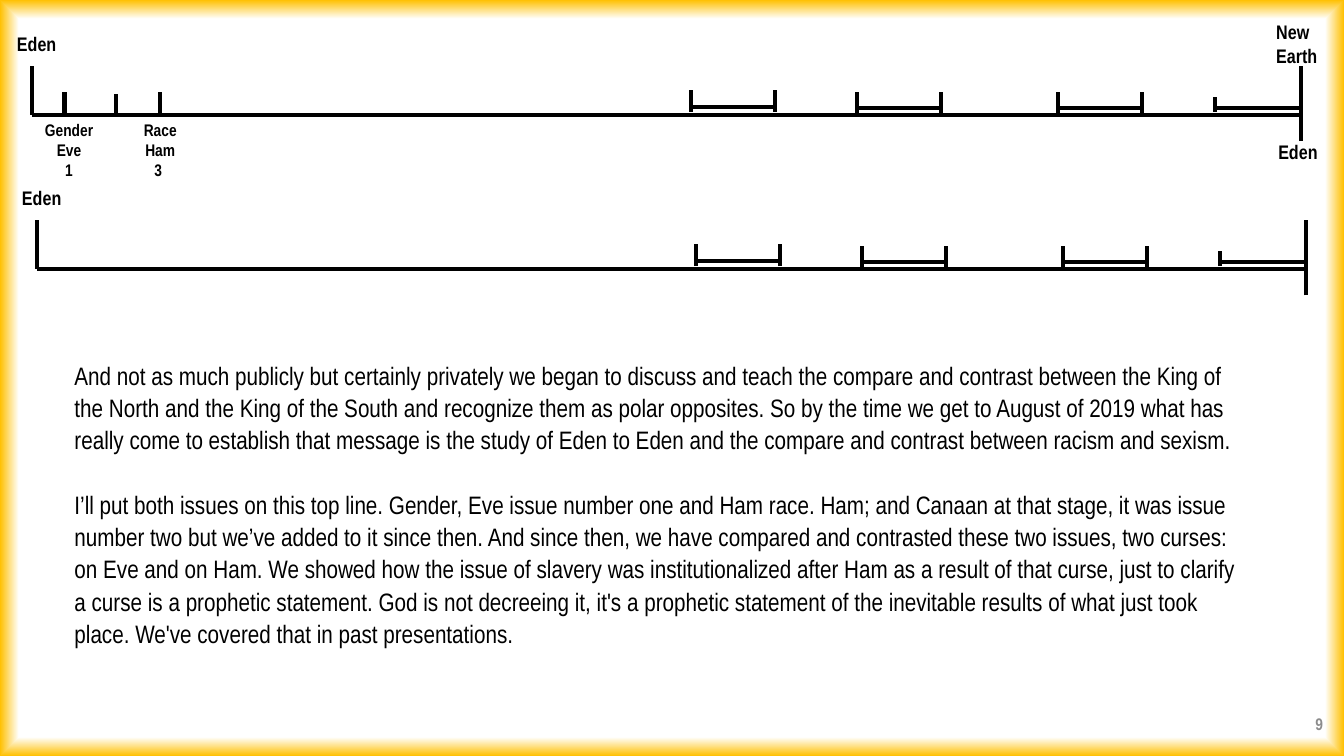
from dataclasses import dataclass

from pptx import Presentation
from pptx.dml.color import RGBColor
from pptx.enum.shapes import MSO_CONNECTOR
from pptx.enum.text import MSO_ANCHOR, MSO_AUTO_SIZE, PP_ALIGN
from pptx.oxml import parse_xml
from pptx.oxml.ns import nsdecls, qn
from pptx.util import Inches, Pt
from lxml.etree import SubElement


@dataclass
class Theme:
    font: str = "Arial Narrow"
    ink: str = "000000"
    muted: str = "8C8C8C"
    paper: str = "FFFFFF"
    glow: str = "FFC000"
    body: int = 18
    label: int = 14
    small: int = 12
    stroke: int = 3


class SlideBuilder:
    def __init__(self, prs, theme):
        self.theme = theme
        self.s = prs.slides.add_slide(prs.slide_layouts[6])

    def glowing_border(self):
        """White page that fades to the glow colour at its edges."""
        t = self.theme
        self.s.background.fill.gradient()
        grad = next(self.s.element.iter(qn("a:gradFill")))
        grad.getparent().replace(grad, parse_xml(
            f'<a:gradFill {nsdecls("a")} rotWithShape="1"><a:gsLst>'
            f'<a:gs pos="95000"><a:srgbClr val="{t.paper}"/></a:gs>'
            f'<a:gs pos="100000"><a:srgbClr val="{t.glow}"/></a:gs>'
            '</a:gsLst><a:path path="shape">'
            '<a:fillToRect l="50000" t="50000" r="50000" b="50000"/>'
            '</a:path></a:gradFill>'))

    def text(self, left, top, width, height, paragraphs, size, bold=True,
             color=None, align=PP_ALIGN.LEFT, spacing=None, gap=0, grow=True):
        sp = self.s.shapes.add_textbox(
            Inches(left), Inches(top), Inches(width), Inches(height))
        tf = sp.text_frame
        tf.word_wrap = True
        if grow:
            tf.auto_size = MSO_AUTO_SIZE.SHAPE_TO_FIT_TEXT
        else:
            tf.vertical_anchor = MSO_ANCHOR.MIDDLE
        for i, words in enumerate(paragraphs):
            p = tf.add_paragraph() if i else tf.paragraphs[0]
            p.alignment = align
            if spacing:
                p.line_spacing = spacing
            if i:
                p.space_before = Pt(gap)
            r = p.add_run()
            r.text = words
            r.font.name = self.theme.font
            r.font.size = Pt(size)
            r.font.bold = bold
            r.font.color.rgb = RGBColor.from_string(color or self.theme.ink)

    def line(self, x1, y1, x2, y2, shapes=None):
        cx = (shapes or self.s.shapes).add_connector(
            MSO_CONNECTOR.STRAIGHT,
            Inches(x1), Inches(y1), Inches(x2), Inches(y2))
        cx.line.width = Pt(self.theme.stroke)
        cx.line.color.rgb = RGBColor.from_string(self.theme.ink)
        SubElement(cx.element.spPr, qn("a:effectLst"))

    def bracket(self, x, top, bar, bottom, closed=True):
        """A span with a post at its start and, if closed, at its end."""
        shapes = self.s.shapes.add_group_shape().shapes
        end = x + 0.835
        self.line(x, bottom, x, top, shapes)
        self.line(end, bar, x, bar, shapes)
        if closed:
            self.line(end, bottom, end, top, shapes)

    def timeline(self, dx, dy):
        self.line(0.32 + dx, 1.14 + dy, 12.9 + dx, 1.14 + dy)
        self.line(12.9 + dx, 1.4 + dy, 12.9 + dx, 0.65 + dy)
        self.line(0.32 + dx, 1.14 + dy, 0.32 + dx, 0.65 + dy)
        for x, top, bar, bottom, closed in BRACKETS:
            self.bracket(x + dx, top + dy, bar + dy, bottom + dy, closed)


# start, top, bar, bottom, closed at the end
BRACKETS = [
    (6.85, 0.89, 1.06, 1.11, True),
    (8.5, 0.91, 1.07, 1.12, True),
    (10.49, 0.91, 1.07, 1.12, True),
    (12.05, 0.96, 1.07, 1.11, False),
]
LABELS = [
    (0.07, 0.27, 0.34, "Eden"),
    (12.56, 0.15, 0.57, "New Earth"),
    (12.58, 1.34, 0.34, "Eden"),
    (0.12, 1.8, 0.34, "Eden"),
]
ISSUES = [
    (0.33, 0.71, ["Gender", "Eve", "1"]),
    (1.26, 0.66, ["Race", "Ham", "3 "]),
]
TICKS = [(0.64, 0.91), (1.15, 0.93), (1.59, 0.91)]
BODY = [
    "And not as much publicly but certainly privately we began to discuss and "
    "teach the compare and contrast between the King of the North and the King "
    "of the South and recognize them as polar opposites. So by the time we get "
    "to August of 2019 what has really come to establish that message is the "
    "study of Eden to Eden and the compare and contrast between racism and "
    "sexism.",
    "I’ll put both issues on this top line. Gender, Eve issue number one and "
    "Ham race. Ham; and Canaan at that stage, it was issue number two but we’ve "
    "added to it since then. And since then, we have compared and contrasted "
    "these two issues, two curses: on Eve and on Ham. We showed how the issue "
    "of slavery was institutionalized after Ham as a result of that curse, just "
    "to clarify a curse is a prophetic statement. God is not decreeing it, it's "
    "a prophetic statement of the inevitable results of what just took place. "
    "We've covered that in past presentations.",
]


def main():
    prs = Presentation()
    prs.slide_width, prs.slide_height = Inches(13.33), Inches(7.5)
    theme = Theme()
    b = SlideBuilder(prs, theme)
    b.glowing_border()

    # Slide number
    b.text(10.22, 6.98, 3, 0.4, ["9"], theme.small, color=theme.muted,
           align=PP_ALIGN.RIGHT, grow=False)

    # Two timelines, the second one shifted
    for dx, dy in [(0, 0), (0.05, 1.53)]:
        b.timeline(dx, dy)
    for left, top, height, words in LABELS:
        b.text(left, top, 0.66, height, [words], theme.label)

    # Issues on the top line
    for x, top in TICKS:
        b.line(x, 1.13, x, top)
    for left, width, words in ISSUES:
        b.text(left, 1.14, width, 0.71, words, theme.small,
               align=PP_ALIGN.CENTER)

    # Body text
    b.text(0.64, 3.5, 11.78, 3, BODY, theme.body, bold=False,
           spacing=1.07, gap=23)

    prs.save("out.pptx")


if __name__ == "__main__":
    main()
